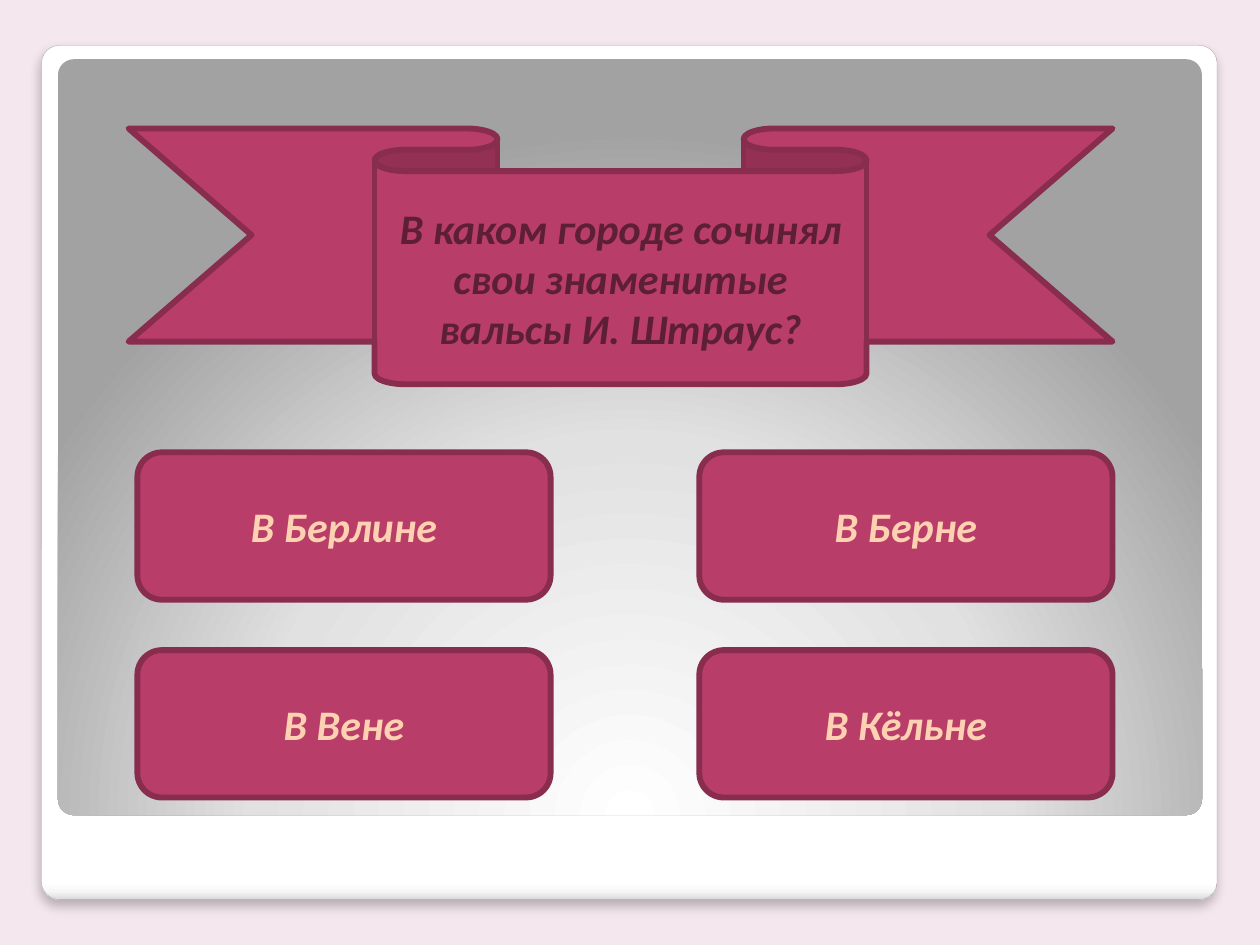
import pptx
import pptx.dml.color
import pptx.enum.shapes
import pptx.enum.text
import pptx.oxml
import pptx.oxml.ns
import pptx.util

RGB = pptx.dml.color.RGBColor
Shape = pptx.enum.shapes.MSO_SHAPE

BACKDROP = RGB(0xF4, 0xE7, 0xED)
WHITE = RGB(0xFF, 0xFF, 0xFF)
NEAR_WHITE = RGB(0xF7, 0xF7, 0xF7)
PALE_GREY = RGB(0xE1, 0xE1, 0xE1)
EDGE_GREY = RGB(0xDA, 0xDA, 0xDA)
MID_GREY = RGB(0xA2, 0xA2, 0xA2)
FRAME_LINE = RGB(0xA4, 0xA4, 0xA4)
RASPBERRY = RGB(0xB8, 0x3D, 0x68)
DARK_RASPBERRY = RGB(0x88, 0x2D, 0x4D)
QUESTION_INK = RGB(0x5C, 0x1F, 0x34)
ANSWER_INK = RGB(0xFD, 0xD1, 0xB1)

CELL = 0.1  # inches per grid column and row
PANEL_CORNER = 0.021
LINEAR_DOWN = '<a:lin ang="5400000" scaled="0"/>'
GLOW_FROM_BELOW = ('<a:path path="circle"><a:fillToRect l="50000" t="175000" '
                   'r="50000" b="-75000"/></a:path>')
SOFT_SHADOW = ('<a:outerShdw {ns} blurRad="76200" dist="50800" dir="5400000" '
               'algn="t" rotWithShape="0"><a:srgbClr val="000000">'
               '<a:alpha val="25000"/></a:srgbClr></a:outerShdw>')


class QuizSlide:
    font_name = "Calibri"
    font_size = pptx.util.Pt(24)
    outline = pptx.util.Pt(3.35)
    ns = pptx.oxml.ns.nsdecls("a")

    def __init__(self, deck):
        self.slide = deck.slides.add_slide(deck.slide_layouts[6])
        backdrop = self.slide.background.fill
        backdrop.solid()
        backdrop.fore_color.rgb = BACKDROP

    def outline_shape(self, preset, col, row, cols, rows):
        """Add a shadowless preset shape placed in grid cells."""
        shape = self.slide.shapes.add_shape(
            preset, *(pptx.util.Inches(n * CELL) for n in (col, row, cols, rows)))
        shape.shadow.inherit = False
        return shape

    def panel(self, col, row, cols, rows, stops, direction):
        """Add a rounded panel with a gradient of (percent, colour) stops."""
        panel = self.outline_shape(Shape.ROUNDED_RECTANGLE, col, row, cols, rows)
        panel.adjustments[0] = PANEL_CORNER
        panel.line.fill.background()
        panel.fill.gradient()
        marks = "".join(
            f'<a:gs pos="{percent * 1000}"><a:srgbClr val="{colour}"/></a:gs>'
            for percent, colour in stops)
        gradient = pptx.oxml.parse_xml(
            f'<a:gradFill {self.ns} rotWithShape="1"><a:gsLst>{marks}</a:gsLst>'
            f'{direction}</a:gradFill>')
        properties = panel.element.spPr
        properties.replace(
            properties.find(pptx.oxml.ns.qn("a:gradFill")), gradient)
        return panel

    def frame(self, *place):
        frame = self.panel(
            *place, [(0, WHITE), (98, WHITE), (99, NEAR_WHITE), (100, EDGE_GREY)],
            LINEAR_DOWN)
        frame.line.color.rgb = FRAME_LINE
        frame.line.width = pptx.util.Pt(0.16)
        effects = frame.element.spPr.find(pptx.oxml.ns.qn("a:effectLst"))
        effects.append(pptx.oxml.parse_xml(SOFT_SHADOW.format(ns=self.ns)))

    def label(self, preset, text, ink, *place):
        """Add a raspberry shape with centred bold italic text."""
        label = self.outline_shape(preset, *place)
        label.fill.solid()
        label.fill.fore_color.rgb = RASPBERRY
        label.line.color.rgb = DARK_RASPBERRY
        label.line.width = self.outline
        label.text_frame.word_wrap = True
        label.text_frame.vertical_anchor = pptx.enum.text.MSO_ANCHOR.MIDDLE
        paragraph = label.text_frame.paragraphs[0]
        paragraph.text = text
        paragraph.alignment = pptx.enum.text.PP_ALIGN.CENTER
        font = paragraph.font
        font.name, font.size = self.font_name, self.font_size
        font.bold = font.italic = True
        font.color.rgb = ink

    def question(self, text, *place):
        self.label(Shape.DOWN_RIBBON, text, QUESTION_INK, *place)

    def answers(self, rows_of_text, col, row, col_step, row_step, cols, rows):
        for i, texts in enumerate(rows_of_text):
            for j, text in enumerate(texts):
                self.label(Shape.ROUNDED_RECTANGLE, text, ANSWER_INK,
                           col + j * col_step, row + i * row_step, cols, rows)


def main():
    deck = pptx.Presentation()
    deck.slide_width = pptx.util.Inches(10)
    deck.slide_height = pptx.util.Inches(7.5)

    quiz = QuizSlide(deck)
    quiz.frame(3.3, 3.6, 93.3, 67.8)
    quiz.panel(4.6, 4.7, 90.8, 60,
               [(0, WHITE), (55, PALE_GREY), (100, MID_GREY)], GLOW_FROM_BELOW)
    quiz.question("В каком городе сочинял свои знаменитые вальсы И. Штраус?",
                  10.2, 10.2, 78.1, 20.3)
    quiz.answers([("В Берлине", "В Берне"), ("В Вене", "В Кёльне")],
                 col=10.9, row=35.9, col_step=44.6, row_step=15.7,
                 cols=32.8, rows=11.7)

    deck.save("out.pptx")


if __name__ == "__main__":
    main()
